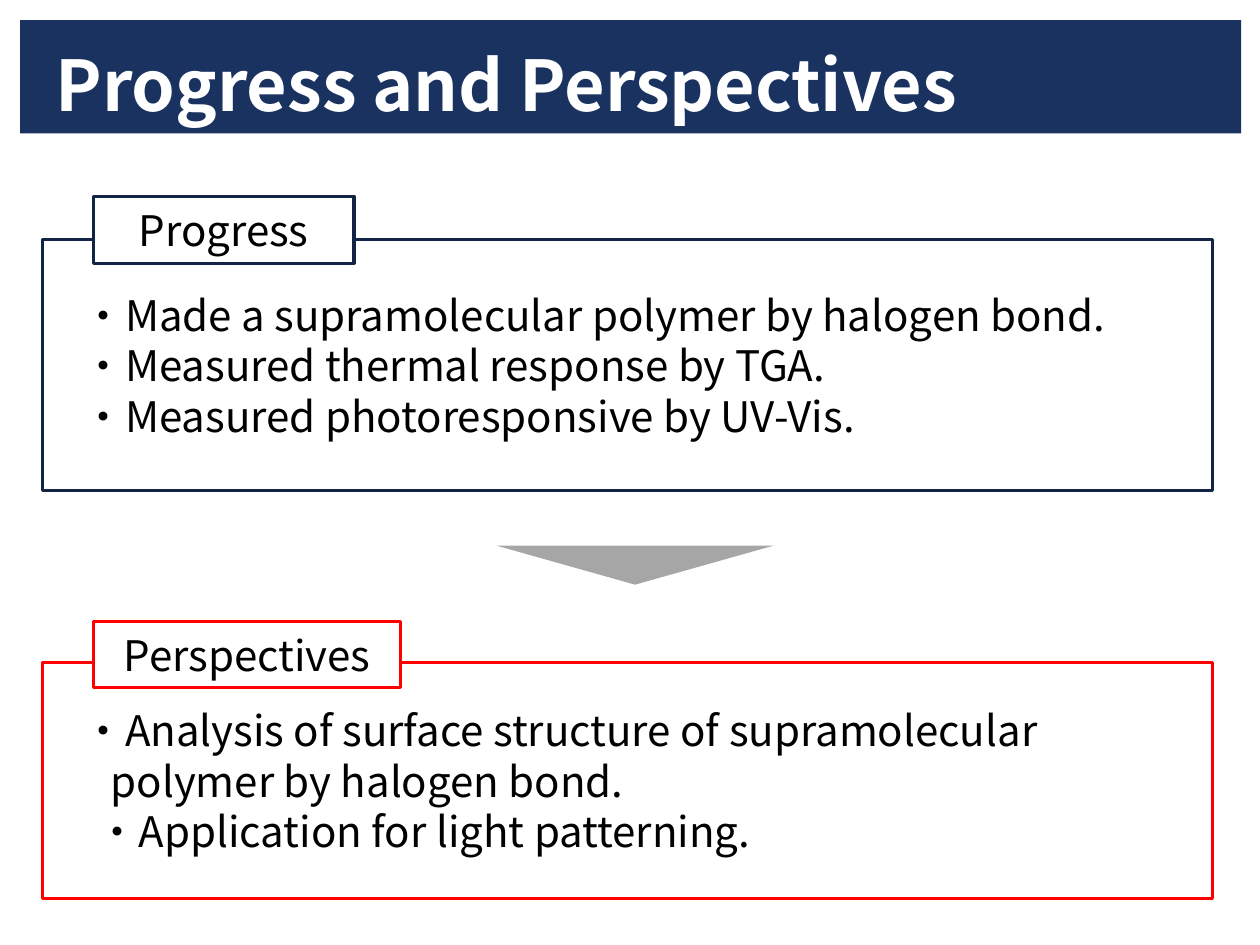
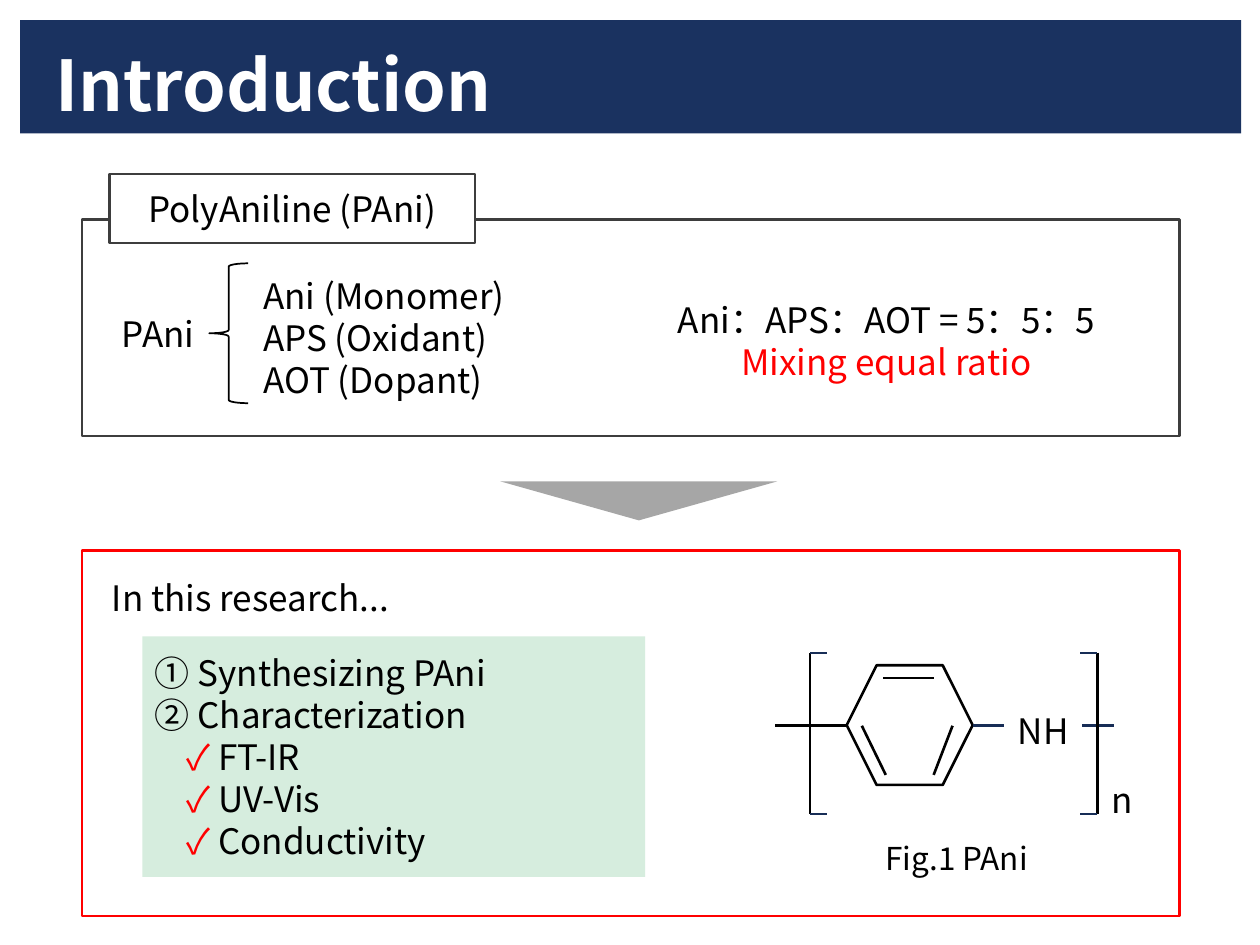
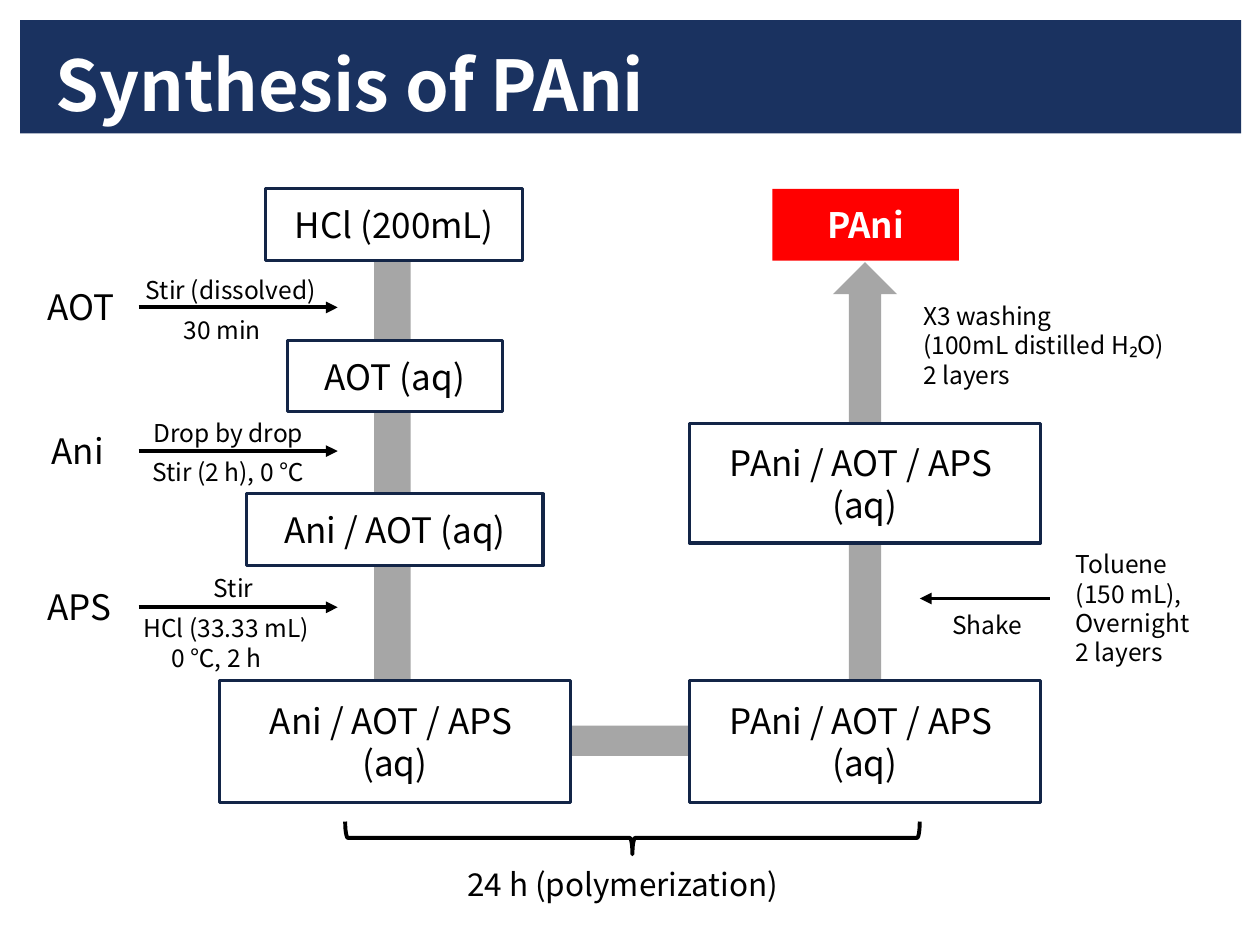
"""Build three slides on polymer progress, introduction and synthesis."""
import pptx
import pptx.util
import pptx.dml.color
import pptx.enum.shapes
import pptx.enum.text
import pptx.oxml.ns
from lxml import etree

Inches = pptx.util.Inches
Pt = pptx.util.Pt
SHAPE = pptx.enum.shapes.MSO_SHAPE
ALIGN = pptx.enum.text.PP_ALIGN
ANCHOR = pptx.enum.text.MSO_ANCHOR
qn = pptx.oxml.ns.qn

FONT = "Noto Sans CJK JP"
BAND, NAVY, BOND = "1A3260", "132547", "172D56"
BLACK, WHITE, RED = "000000", "FFFFFF", "FF0000"
CHARCOAL, GREY, MINT = "3D3D3D", "A6A6A6", "D6EDDE"


def rgb(color):
    """Turn a hex string into a colour."""
    return pptx.dml.color.RGBColor.from_string(color)


def set_font(font, size, color, bold):
    """Format a font for Latin and East Asian letters alike."""
    font.name = FONT
    font.size = Pt(size)
    font.bold = bold
    font.color.rgb = rgb(color)
    etree.SubElement(font._element, qn("a:ea"), typeface=FONT)


def write(frame, lines, size, color=BLACK, align=ALIGN.LEFT, bold=False):
    """Write one paragraph per line; a line may be a list of (text, colour)."""
    for number, line in enumerate(lines):
        paragraph = frame.paragraphs[0] if number == 0 else frame.add_paragraph()
        paragraph.alignment = align
        set_font(paragraph.font, size, color, bold)
        if isinstance(line, str):
            paragraph.text = line
            continue
        for text, run_color in line:
            run = paragraph.add_run()
            run.text = text
            run.font.color.rgb = rgb(run_color)


def indent(paragraph, left, first=0):
    """Set the left margin and first-line offset of a paragraph in inches."""
    properties = paragraph._p.get_or_add_pPr()
    properties.set("marL", str(Inches(left)))
    properties.set("indent", str(Inches(first)))


def add_figure(slide, kind, at, fill=None, line=None, width=1.75, rotation=0):
    """Add a preset shape with a plain fill and outline."""
    shape = slide.shapes.add_shape(kind, *map(Inches, at))
    shape.shadow.inherit = False
    shape.rotation = rotation
    if fill:
        shape.fill.solid()
        shape.fill.fore_color.rgb = rgb(fill)
    else:
        shape.fill.background()
    if line:
        shape.line.color.rgb = rgb(line)
        shape.line.width = Pt(width)
    else:
        shape.line.fill.background()
    return shape


def add_box(slide, at, lines=(), size=20, fill=WHITE, line=None, width=1.75,
            color=BLACK, align=ALIGN.CENTER, bold=False):
    """Add a rectangle with text centred vertically and return its text frame."""
    frame = add_figure(slide, SHAPE.RECTANGLE, at, fill, line, width).text_frame
    frame.vertical_anchor = ANCHOR.MIDDLE
    write(frame, lines, size, color, align, bold)
    return frame


def add_label(slide, at, lines, size=20):
    """Add unwrapped free text and return its text frame."""
    frame = slide.shapes.add_textbox(*map(Inches, at)).text_frame
    frame.word_wrap = False
    frame.auto_size = pptx.enum.text.MSO_AUTO_SIZE.SHAPE_TO_FIT_TEXT
    write(frame, lines, size)
    return frame


def add_line(slide, start, end, color=BLACK, width=1.5, arrow=False):
    """Add a straight line, with an arrowhead at its end if asked."""
    connector = slide.shapes.add_connector(
        pptx.enum.shapes.MSO_CONNECTOR.STRAIGHT, *map(Inches, start + end))
    connector.line.color.rgb = rgb(color)
    connector.line.width = Pt(width)
    properties = connector.element.spPr
    if arrow:
        etree.SubElement(properties.find(qn("a:ln")), qn("a:tailEnd"), type="triangle")
    etree.SubElement(properties, qn("a:effectLst"))


def add_down_marker(slide, left, top):
    """Add the flat grey triangle that leads to the next panel."""
    add_figure(slide, SHAPE.ISOSCELES_TRIANGLE, (left, top, 2.2, 0.31), GREY, rotation=180)


def add_titled_slide(presentation, heading):
    """Add a title-only slide with its heading in the band."""
    slide = presentation.slides.add_slide(presentation.slide_layouts[5])
    title = slide.shapes.title
    title.left, title.top, title.width, title.height = map(Inches, (0.34, 0.33, 9.41, 0.72))
    title.text_frame.auto_size = pptx.enum.text.MSO_AUTO_SIZE.NONE
    title.text_frame.vertical_anchor = ANCHOR.BOTTOM
    write(title.text_frame, [heading], 40, WHITE, bold=True)
    return slide


def move_band_to_layout(slide):
    """Draw the title band and place it behind everything on the layout."""
    band = add_figure(slide, SHAPE.RECTANGLE, (0.16, 0.16, 9.69, 0.9), BAND)
    slide.slide_layout.shapes.element.insert(2, band.element)


def fill_progress(slide):
    """Show the progress and perspectives panels."""
    progress = add_box(slide, (0.34, 1.9, 9.28, 1.99), [
        "・Made a supramolecular polymer by halogen bond.",
        "・Measured thermal response by TGA.",
        "・Measured photoresponsive by UV-Vis."], 24, line=NAVY, align=ALIGN.LEFT)
    for paragraph in progress.paragraphs:
        indent(paragraph, 0.22)
    add_box(slide, (0.74, 1.56, 2.07, 0.53), ["Progress"], 24, line=NAVY)
    add_down_marker(slide, 3.94, 4.33)
    perspectives = add_box(slide, (0.34, 5.26, 9.28, 1.87), [
        "・Analysis of surface structure of supramolecular\vpolymer by halogen bond.",
        "・Application for light patterning."], 24, line=RED, align=ALIGN.LEFT)
    indent(perspectives.paragraphs[0], 0.44, -0.22)
    indent(perspectives.paragraphs[1], 0.33)
    add_box(slide, (0.74, 4.93, 2.44, 0.53), ["Perspectives"], 24, line=RED)


def add_repeat_bracket(slide, spine, tip):
    """Add one square bracket of the repeat unit."""
    top, bottom = 5.18, 6.46
    add_line(slide, (spine, top), (spine, bottom))
    for level in (top, bottom):
        add_line(slide, (spine, level), (tip, level), BOND, 1)


def add_polyaniline(slide):
    """Draw the structural formula and its caption."""
    axis = 5.76
    add_figure(slide, SHAPE.HEXAGON, (6.72, 5.28, 1, 0.95), WHITE, BLACK, 1.5)
    double_bonds = [((7.01, 5.38), (7.41, 5.38)),
                    ((6.84, axis), (7.03, 6.15)),
                    ((7.56, axis), (7.41, 6.15))]
    for start, end in double_bonds:
        add_line(slide, start, end)
    add_line(slide, (6.72, axis), (6.15, axis))
    for left in (7.72, 8.59):
        add_line(slide, (left, axis), (left + 0.25, axis), BOND)
    add_repeat_bracket(slide, 6.43, 6.56)
    add_repeat_bracket(slide, 8.71, 8.57)
    add_label(slide, (7.98, 5.58, 0.62, 0.44), ["NH"])
    add_label(slide, (8.72, 6.13, 0.38, 0.44), ["n"])
    add_label(slide, (6.93, 6.61, 1.43, 0.4), ["Fig.1 PAni"], 18)


def fill_introduction(slide):
    """Show the composition of PAni and the plan of the research."""
    add_box(slide, (0.65, 1.74, 8.71, 1.72), line=CHARCOAL, width=1.5)
    add_label(slide, (1.99, 2.13, 2.36, 1.11),
              ["Ani (Monomer)", "APS (Oxidant)", "AOT (Dopant)"])
    add_label(slide, (0.87, 2.43, 0.8, 0.44), ["PAni"])
    add_figure(slide, SHAPE.LEFT_BRACE, (1.66, 2.09, 0.31, 1.11), line=BLACK, width=1)
    add_box(slide, (4.97, 2.21, 4.13, 0.99),
            ["Ani：APS：AOT = 5：5：5", [("Mixing equal ratio", RED)]])
    add_down_marker(slide, 3.97, 3.82)
    add_box(slide, (0.87, 1.38, 2.9, 0.55), ["PolyAniline (PAni)"], line=CHARCOAL, width=1.5)

    add_box(slide, (0.65, 4.37, 8.71, 2.9), line=RED, width=1.5)
    add_label(slide, (0.79, 4.53, 2.64, 0.44), ["In this research..."])
    methods = [[("✓ ", RED), (method, BLACK)] for method in ("FT-IR", "UV-Vis", "Conductivity")]
    plan = add_box(slide, (1.13, 5.05, 3.99, 1.91),
                   ["① Synthesizing PAni", "② Characterization"] + methods,
                   fill=MINT, align=ALIGN.LEFT)
    for paragraph in plan.paragraphs[2:]:
        indent(paragraph, 0.25)
    add_polyaniline(slide)


def fill_synthesis(slide):
    """Show the synthesis route from HCl to PAni."""
    add_figure(slide, SHAPE.UP_ARROW, (6.61, 2.08, 0.51, 3.31), GREY)
    for path_at in ((4.52, 5.76, 0.94, 0.24), (2.97, 1.5, 0.29, 4.58)):
        add_figure(slide, SHAPE.RECTANGLE, path_at, GREY)

    stages = [((2.11, 1.5, 2.04, 0.57), ["HCl (200mL)"]),
              ((2.28, 2.7, 1.71, 0.57), ["AOT (aq)"]),
              ((1.96, 3.92, 2.35, 0.57), ["Ani / AOT (aq)"]),
              ((1.74, 5.4, 2.79, 0.97), ["Ani / AOT / APS ", "(aq)"]),
              ((5.47, 5.4, 2.79, 0.97), ["PAni / AOT / APS ", "(aq)"]),
              ((5.47, 3.36, 2.79, 0.95), ["PAni / AOT / APS ", "(aq)"])]
    for at, lines in stages:
        add_box(slide, at, lines, line=NAVY)
    add_box(slide, (6.13, 1.5, 1.48, 0.57), ["PAni"], fill=RED, color=WHITE, bold=True)

    reagents = [("AOT", (0.28, 2.22, 0.78, 0.44), 2.44),
                ("Ani", (0.31, 3.36, 0.64, 0.44), 3.58),
                ("APS", (0.28, 4.6, 0.74, 0.44), 4.82)]
    for reagent, at, level in reagents:
        add_label(slide, at, [reagent])
        add_line(slide, (1.1, level), (2.68, level), width=2.25, arrow=True)
    add_line(slide, (8.33, 4.75), (7.3, 4.75), width=2.25, arrow=True)

    conditions = [((1.06, 2.13, 1.64, 0.34), ["Stir (dissolved)"]),
                  ((1.36, 2.45, 0.87, 0.34), ["30 min"]),
                  ((1.12, 3.27, 1.47, 0.34), ["Drop by drop"]),
                  ((1.11, 3.58, 1.6, 0.34), ["Stir (2 h), 0 ℃"]),
                  ((1.6, 4.5, 0.53, 0.34), ["Stir"]),
                  ((7.23, 2.34, 2.28, 0.81),
                   ["X3 washing", "(100mL distilled H₂O)", "2 layers"]),
                  ((7.46, 4.79, 0.78, 0.34), ["Shake"]),
                  ((8.44, 4.31, 1.17, 1.04),
                   ["Toluene", "(150 mL),", "Overnight", "2 layers"])]
    for at, lines in conditions:
        add_label(slide, at, lines, 14)
    acid = add_label(slide, (1.04, 4.82, 1.69, 0.57), ["HCl (33.33 mL)", "0 ℃, 2 h"], 14)
    indent(acid.paragraphs[1], 0.22)

    add_figure(slide, SHAPE.LEFT_BRACE, (4.89, 4.37, 0.26, 4.56),
               line=BLACK, width=2.25, rotation=270)
    add_label(slide, (3.61, 6.82, 2.87, 0.4), ["24 h (polymerization)"], 18)


def main():
    """Build and save the presentation."""
    presentation = pptx.Presentation()
    presentation.slide_width = Inches(10)
    presentation.slide_height = Inches(7.5)
    progress = add_titled_slide(presentation, "Progress and Perspectives")
    move_band_to_layout(progress)
    fill_progress(progress)
    fill_introduction(add_titled_slide(presentation, "Introduction"))
    fill_synthesis(add_titled_slide(presentation, "Synthesis of PAni"))
    presentation.save("out.pptx")


if __name__ == "__main__":
    main()
